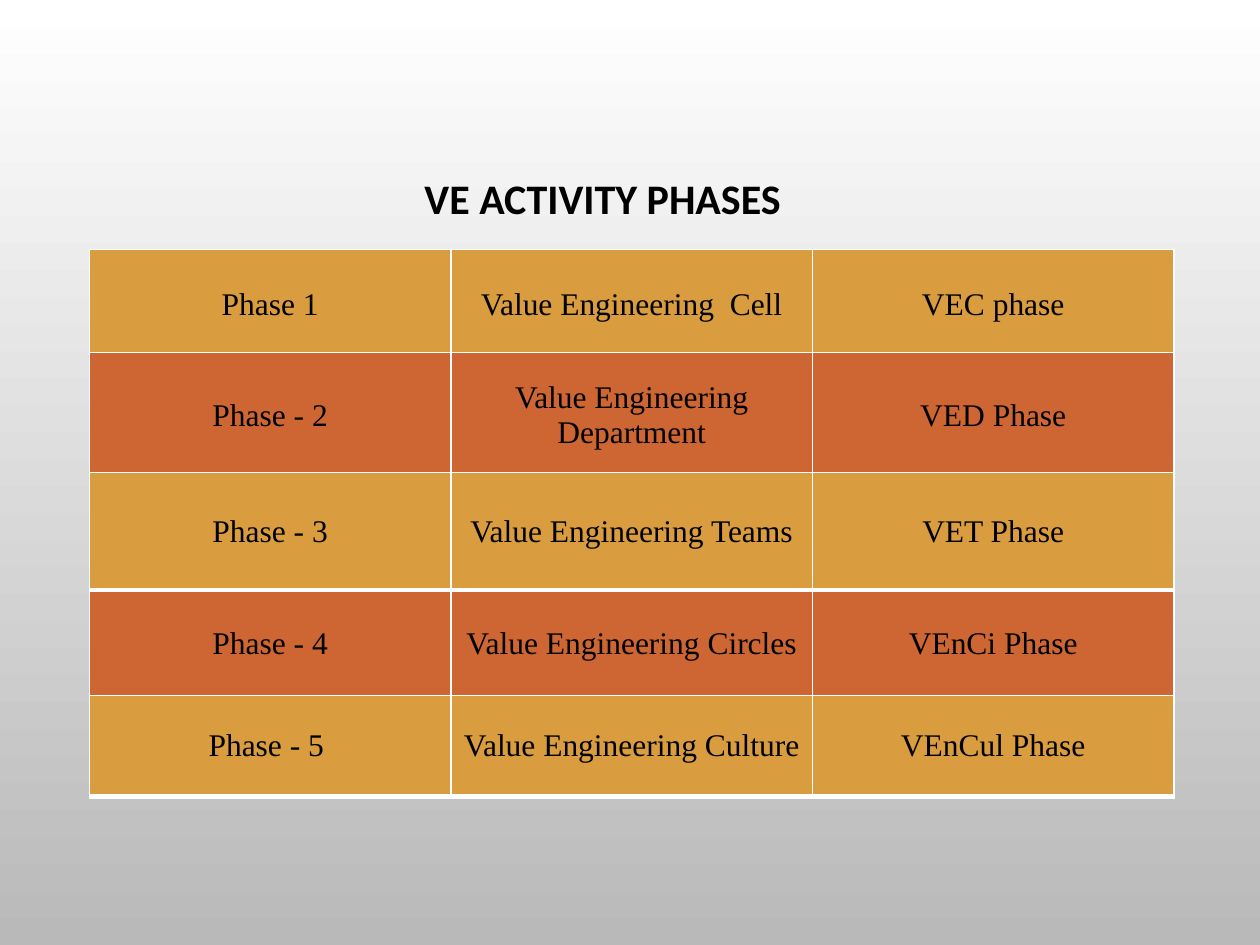
from lxml.etree import SubElement
from pptx import Presentation
from pptx.dml.color import RGBColor
from pptx.enum.text import MSO_ANCHOR, MSO_AUTO_SIZE, PP_ALIGN
from pptx.oxml.ns import qn
from pptx.util import Pt


def rgb(value):
    return RGBColor.from_string(value)


class Deck:
    TITLE = {"name": "Calibri", "size": Pt(24), "bold": True}
    BODY = {"name": "Times New Roman", "size": Pt(18), "bold": False}
    MARGINS = {"margin_left": Pt(5.2), "margin_right": Pt(5.2),
               "margin_top": Pt(2.6), "margin_bottom": Pt(2.6)}
    BORDERS = {"a:lnL": 1, "a:lnR": 1, "a:lnT": 1, "a:lnB": 3}
    INK, LINE = "000000", "FFFFFF"

    def __init__(self, prs):
        self.s = prs.slides.add_slide(prs.slide_layouts[6])

    def background(self, top, bottom):
        fill = self.s.background.fill
        fill.gradient()
        fill.gradient_angle = 270
        for stop, color, position in zip(fill.gradient_stops, (top, bottom), (0, 1)):
            stop.color.rgb = rgb(color)
            stop.position = position

    def add_text(self, p, text, style):
        r = p.add_run()
        r.text = text
        for name, value in style.items():
            setattr(r.font, name, value)
        r.font.color.rgb = rgb(self.INK)

    def title(self, text, x, y, w, h):
        tf = self.s.shapes.add_textbox(Pt(x), Pt(y), Pt(w), Pt(h)).text_frame
        tf.word_wrap = True
        tf.auto_size = MSO_AUTO_SIZE.SHAPE_TO_FIT_TEXT
        self.add_text(tf.paragraphs[0], text, self.TITLE)

    def cell(self, cell, text, fill):
        for name, value in self.MARGINS.items():
            setattr(cell, name, value)
        cell.vertical_anchor = MSO_ANCHOR.MIDDLE
        p = cell.text_frame.paragraphs[0]
        p.alignment = PP_ALIGN.CENTER
        self.add_text(p, text, self.BODY)
        # Borders come before the fill in the cell properties
        tc_pr = cell._tc.get_or_add_tcPr()
        for tag, width in self.BORDERS.items():
            ln = SubElement(tc_pr, qn(tag), w=str(Pt(width)))
            solid = SubElement(ln, qn("a:solidFill"))
            SubElement(solid, qn("a:srgbClr"), val=self.LINE)
        cell.fill.solid()
        cell.fill.fore_color.rgb = rgb(fill)

    def band(self, texts, x, y, col_w, h, fill):
        n = len(texts)
        table = self.s.shapes.add_table(1, n, Pt(x), Pt(y), Pt(col_w * n), Pt(h)).table
        table.first_row = table.horz_banding = False
        for i, text in enumerate(texts):
            table.columns[i].width = Pt(col_w)
            self.cell(table.cell(0, i), text, fill)


def main():
    prs = Presentation()
    prs.slide_width, prs.slide_height = Pt(720), Pt(540)
    deck = Deck(prs)
    deck.background("FFFFFF", "B9B9B9")

    # Heading
    deck.title("VE ACTIVITY PHASES", 235.5, 95, 235, 36)

    # One single-row table per phase, in alternating colours
    phases = [
        (142.6, 62.6, ("Phase 1", "Value Engineering  Cell", "VEC phase")),
        (201.4, 72, ("Phase - 2", "Value Engineering Department", "VED Phase")),
        (270, 67.5, ("Phase - 3", "Value Engineering Teams", "VET Phase")),
        (337.7, 60.5, ("Phase - 4", "Value Engineering Circles", "VEnCi Phase")),
        (397.4, 57.6, ("Phase - 5 ", "Value Engineering Culture", "VEnCul Phase")),
    ]
    fills = ("D99C3F", "CE6633")
    for i, (y, h, texts) in enumerate(phases):
        deck.band(texts, 51.1, y, 206.6, h, fills[i % 2])

    prs.save("out.pptx")


if __name__ == "__main__":
    main()
